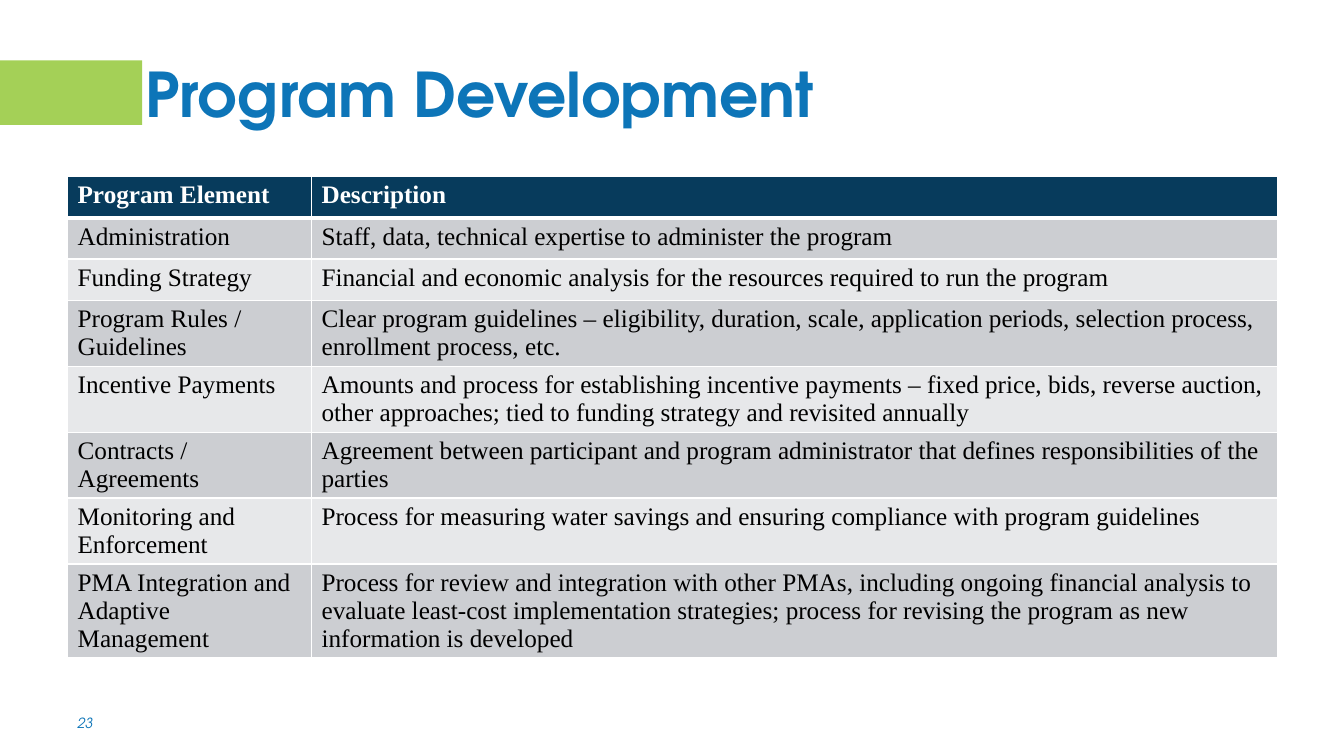
"""Build the Program Development slide."""
from dataclasses import dataclass

from lxml import etree
from pptx import Presentation
from pptx import util as u
from pptx.dml.color import RGBColor
from pptx.enum import shapes, text
from pptx.oxml import ns

PX = 9144
SANS, SERIF = "TeX Gyre Adventor", "Times New Roman"
BLUE, NAVY, GREEN = "0D75B8", "073B5C", "A4D057"
WHITE, BLACK = "FFFFFF", "000000"
BANDS = ("CCCED2", "E7E8EA")
ROW_HEIGHT = 41
COLUMN_WIDTHS = (242, 958)


@dataclass(frozen=True)
class Style:
    """Character formatting."""
    font: str
    size: int
    color: str
    bold: bool = False
    italic: bool = False


@dataclass(frozen=True)
class Label:
    """A line of text in a box measured in px."""
    words: str
    left: int
    top: int
    width: int
    height: int
    style: Style


@dataclass(frozen=True)
class Element:
    """One table row."""
    name: str
    description: str


LABELS = (
    Label("Program Development", 134, 30, 1133, 125, Style(SANS, 44, BLUE, bold=True)),
    Label("23", 67, 697, 67, 40, Style(SANS, 10, BLUE, italic=True)),
)
HEADING = Style(SERIF, 18, WHITE, bold=True)
BODY = Style(SERIF, 18, BLACK)
ELEMENTS = (
    Element("Program Element", "Description"),
    Element("Administration", "Staff, data, technical expertise to administer the program"),
    Element("Funding Strategy",
            "Financial and economic analysis for the resources required to run the program"),
    Element("Program Rules / Guidelines",
            "Clear program guidelines – eligibility, duration, scale, application periods, "
            "selection process, enrollment process, etc."),
    Element("Incentive Payments",
            "Amounts and process for establishing incentive payments – fixed price, bids, "
            "reverse auction, other approaches; tied to funding strategy and revisited annually"),
    Element("Contracts / Agreements",
            "Agreement between participant and program administrator that defines "
            "responsibilities of the parties"),
    Element("Monitoring and Enforcement",
            "Process for measuring water savings and ensuring compliance with program guidelines"),
    Element("PMA Integration and Adaptive Management",
            "Process for review and integration with other PMAs, including ongoing financial "
            "analysis to evaluate least-cost implementation strategies; process for revising "
            "the program as new information is developed"),
)


def px(length: int) -> u.Emu:
    """Turn px into EMU."""
    return u.Emu(length * PX)


def paint(fill, color: str) -> None:
    """Apply a solid colour."""
    fill.solid()
    fill.fore_color.rgb = RGBColor.from_string(color)


def write(frame, words: str, style: Style) -> None:
    """Add one formatted run to the first paragraph."""
    run = frame.paragraphs[0].add_run()
    run.text = words
    font = run.font
    font.name, font.size = style.font, u.Pt(style.size)
    font.bold, font.italic = style.bold, style.italic
    paint(font.fill, style.color)


def add_label(slide, label: Label) -> None:
    """Draw a vertically centred label."""
    box = slide.shapes.add_textbox(*map(px, (label.left, label.top, label.width, label.height)))
    frame = box.text_frame
    frame.word_wrap = True
    frame.vertical_anchor = text.MSO_ANCHOR.MIDDLE
    write(frame, label.words, label.style)


def add_borders(cell, top: int, bottom: int) -> None:
    """Give a cell white edges, with top and bottom widths in points."""
    properties = cell._tc.get_or_add_tcPr()
    for side, width in (("L", 1), ("R", 1), ("T", top), ("B", bottom)):
        line = etree.SubElement(properties, ns.qn(f"a:ln{side}"), w=str(u.Pt(width)))
        solid = etree.SubElement(line, ns.qn("a:solidFill"))
        etree.SubElement(solid, ns.qn("a:srgbClr"), val=WHITE)


def add_elements(slide) -> None:
    """Draw the table of program elements."""
    frame = slide.shapes.add_table(
        len(ELEMENTS), len(COLUMN_WIDTHS), px(67), px(175),
        px(sum(COLUMN_WIDTHS)), px(ROW_HEIGHT * len(ELEMENTS)))
    table = frame.table
    for column, width in zip(table.columns, COLUMN_WIDTHS):
        column.width = px(width)
    for index, element in enumerate(ELEMENTS):
        table.rows[index].height = px(ROW_HEIGHT)
        color = BANDS[(index - 1) % 2] if index else NAVY
        for column, words in enumerate((element.name, element.description)):
            cell = table.cell(index, column)
            add_borders(cell, 3 if index == 1 else 1, 1 if index else 3)
            paint(cell.fill, color)
            write(cell.text_frame, words, BODY if index else HEADING)


def main() -> None:
    """Build and save the slide."""
    deck = Presentation()
    deck.slide_width, deck.slide_height = px(1333), px(750)
    slide = deck.slides.add_slide(deck.slide_layouts[6])
    accent = slide.shapes.add_shape(
        shapes.MSO_SHAPE.RECTANGLE, px(0), px(60), px(141), px(64))
    accent.shadow.inherit = False
    paint(accent.fill, GREEN)
    accent.line.fill.background()
    add_elements(slide)
    for label in LABELS:
        add_label(slide, label)
    deck.save("out.pptx")


if __name__ == "__main__":
    main()
